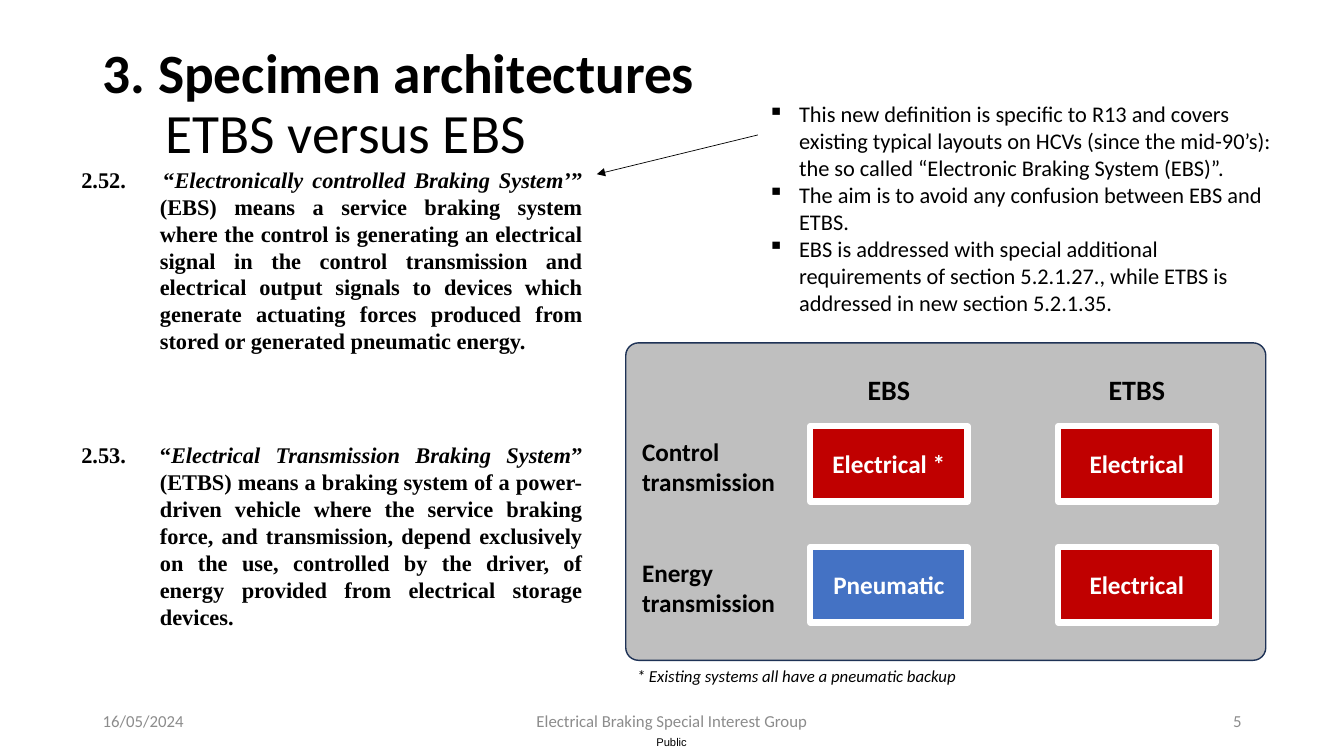
from pptx import Presentation
from pptx.util import Cm, Pt
from pptx.dml.color import RGBColor
from pptx.enum.shapes import MSO_SHAPE, MSO_CONNECTOR
from pptx.enum.text import PP_ALIGN, MSO_ANCHOR
from pptx.oxml.ns import qn
from lxml.etree import SubElement

TITLE = ["3. Specimen architectures", "ETBS versus EBS"]
TERMS = [
    (4.06, "2.52. \t“", "Electronically controlled Braking System’",
     "” (EBS) means a service braking system where the control is generating an "
     "electrical signal in the control transmission and electrical output signals to "
     "devices which generate actuating forces produced from stored or generated "
     "pneumatic energy."),
    (11, "2.53.\t“", "Electrical Transmission Braking System",
     "” (ETBS) means a braking system of a power-driven vehicle where the service "
     "braking force, and transmission, depend exclusively on the use, controlled by "
     "the driver, of energy provided from electrical storage devices."),
]
NOTES = [
    "This new definition is specific to R13 and covers existing typical layouts on HCVs "
    "(since the mid-90’s): the so called “Electronic Braking System (EBS)”.",
    "The aim is to avoid any confusion between EBS and ETBS.",
    "EBS is addressed with special additional requirements of section 5.2.1.27., while "
    "ETBS is addressed in new section 5.2.1.35.",
]
RED, BLUE = "C00000", "4472C4"
HEADS = ["EBS", "ETBS"]
ROWS = [
    ("Control transmission", [("Electrical *", RED), ("Electrical", RED)]),
    ("Energy transmission", [("Pneumatic", BLUE), ("Electrical", RED)]),
]
FOOT = [
    (2.34, 7.62, "16/05/2024", PP_ALIGN.LEFT),
    (11.22, 11.43, "Electrical Braking Special Interest Group", PP_ALIGN.CENTER),
    (23.92, 7.62, "5", PP_ALIGN.RIGHT),
]
LEFT, TOP, WIDE, HIGH = 20.42, 10.74, 3.96, 1.9
STEP_X, STEP_Y = 6.25, 3.05

deck = Presentation()
deck.slide_width, deck.slide_height = Cm(33.87), Cm(19.05)
slide = deck.slides.add_slide(deck.slide_layouts[6])
shapes = slide.shapes


def color(code):
    return RGBColor.from_string(code)


def style(para, size, code="000000", bold=False, italic=None, face="Calibri",
          align=PP_ALIGN.LEFT):
    font = para.font
    font.name, font.size, font.bold, font.italic = face, Pt(size), bold, italic
    font.color.rgb = color(code)
    para.alignment = align


def indent(para, left, first=0):
    props = para._p.get_or_add_pPr()
    props.set("marL", str(Cm(left)))
    props.set("indent", str(Cm(first)))
    return props


def text(x, y, w, h, lines, size, wrap=True, anchor=MSO_ANCHOR.TOP, **look):
    frame = shapes.add_textbox(Cm(x), Cm(y), Cm(w), Cm(h)).text_frame
    frame.word_wrap = wrap
    frame.vertical_anchor = anchor
    frame.text = "\n".join(lines)
    for para in frame.paragraphs:
        style(para, size, **look)
    return frame


def block(kind, x, y, w, h, fill, edge, width):
    shape = shapes.add_shape(kind, Cm(x), Cm(y), Cm(w), Cm(h))
    shape.shadow.inherit = False
    shape.fill.solid()
    shape.fill.fore_color.rgb = color(fill)
    shape.line.color.rgb = color(edge)
    shape.line.width = Pt(width)
    return shape


label = text(16.54, 18.54, 0.86, 0.33, ["Public"], 8, wrap=False, face="Arial")
label.margin_left = label.margin_right = label.margin_top = label.margin_bottom = 0

title = text(2.34, 1.02, 29.21, 3.68, TITLE, 39.6)
for para in title.paragraphs:
    para.line_spacing = 0.9
title.paragraphs[0].font.bold = True
indent(title.paragraphs[1], 1.58)

for x, w, line, align in FOOT:
    text(x, 17.65, w, 1.02, [line], 12, anchor=MSO_ANCHOR.MIDDLE, code="8C8C8C", align=align)

for y, mark, name, rest in TERMS:
    para = text(1.8, y, 13.13, 5.05, [""], 16, bold=True, face="Times New Roman",
                align=PP_ALIGN.JUSTIFY).paragraphs[0]
    indent(para, 1.98, -1.98)
    para.space_after = Pt(6)
    for part in (mark, name, rest):
        run = para.add_run()
        run.text = part
        run.font.italic = part == name

for para in text(19.1, 2.41, 13.49, 5.74, NOTES, 16).paragraphs:
    props = indent(para, 0.79, -0.79)
    spot = props.find(qn("a:defRPr"))
    bullet = SubElement(props, qn("a:buChar"))
    bullet.set("char", "▪")
    if spot is not None:
        spot.addprevious(bullet)

arrow = shapes.add_connector(MSO_CONNECTOR.STRAIGHT, Cm(19.1), Cm(3.4), Cm(15.04), Cm(4.39))
arrow.line.color.rgb = color("000000")
arrow.line.width = Pt(0.5)
SubElement(arrow.line._get_or_add_ln(), qn("a:tailEnd")).set("type", "triangle")
SubElement(arrow._element.spPr, qn("a:effectLst"))

panel = block(MSO_SHAPE.ROUNDED_RECTANGLE, 15.77, 8.64, 16.13, 8, "BFBFBF", "1E3256", 1)
panel.adjustments[0] = 0.04

for col, head in enumerate(HEADS):
    text(LEFT + col * STEP_X, 9.27, WIDE, 1.12, [head], 20, bold=True, align=PP_ALIGN.CENTER)

for row, (name, cells) in enumerate(ROWS):
    y = TOP + row * STEP_Y
    text(15.93, y + 0.12, 4.8, 1.8, [name], 18, bold=True)
    for col, (word, fill) in enumerate(cells):
        cell = block(MSO_SHAPE.RECTANGLE, LEFT + col * STEP_X, y, WIDE, HIGH, fill, "FFFFFF", 4.5)
        frame = cell.text_frame
        frame.text = word
        frame.vertical_anchor = MSO_ANCHOR.MIDDLE
        style(frame.paragraphs[0], 18, "FFFFFF", bold=True, align=PP_ALIGN.CENTER)

text(15.8, 16.66, 8.64, 0.76, ["* Existing systems all have a pneumatic backup"], 12,
     wrap=False, italic=True)

deck.save("out.pptx")
